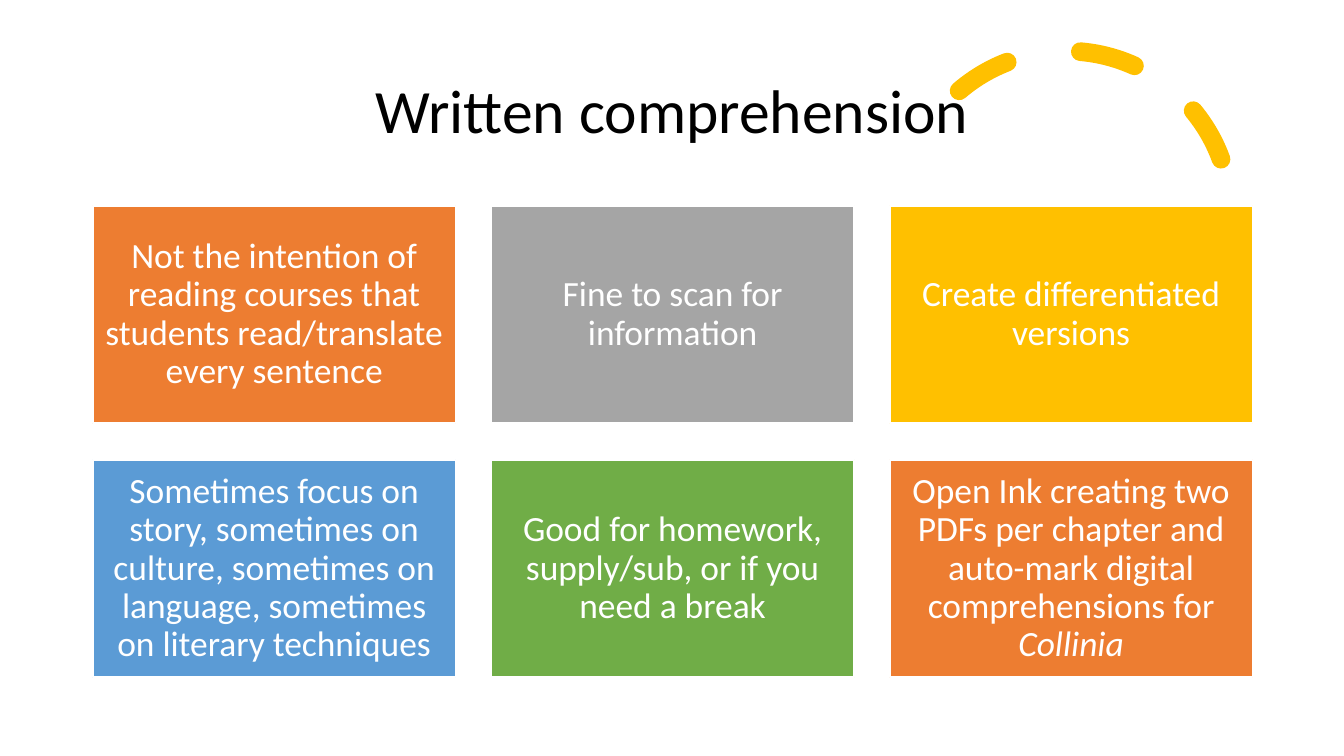
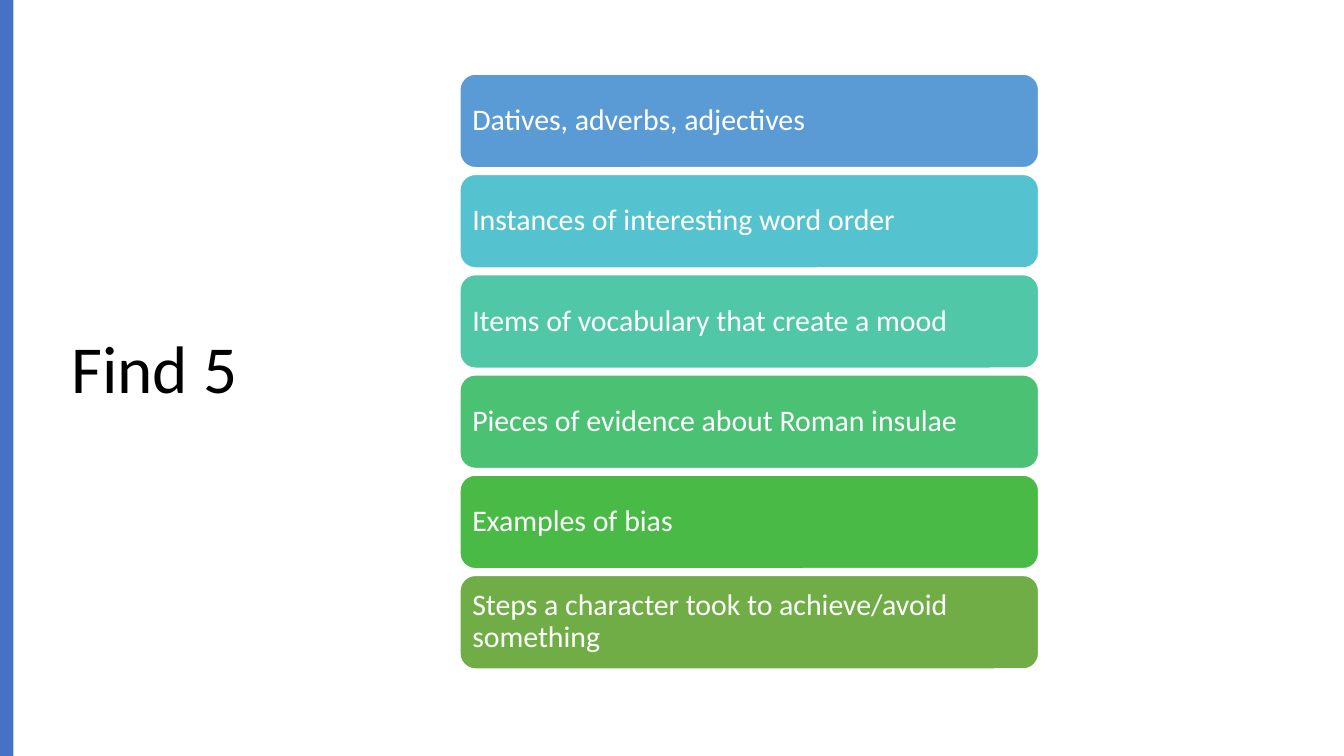
"""Build two teaching slides on written comprehension and close reading."""

from dataclasses import dataclass
from typing import Any

from lxml.etree import SubElement
from pptx import Presentation
from pptx.dml.color import RGBColor
from pptx.enum.dml import MSO_LINE_DASH_STYLE
from pptx.enum.shapes import MSO_SHAPE
from pptx.enum.text import MSO_ANCHOR, MSO_AUTO_SIZE, PP_ALIGN
from pptx.presentation import Presentation as Deck
from pptx.shapes.autoshape import Shape
from pptx.slide import Slide
from pptx.util import Inches, Pt


@dataclass(frozen=True)
class Theme:
    font: str = "Calibri"
    ink: str = "000000"
    paper: str = "FFFFFF"
    navy: str = "4472C4"
    orange: str = "ED7D31"
    grey: str = "A5A5A5"
    gold: str = "FFC000"
    blue: str = "5B9BD5"
    green: str = "70AD47"
    cyan: str = "55C3CF"
    teal: str = "50C8A7"
    mint: str = "4BC174"
    leaf: str = "4ABA46"
    wide_title: float = 33
    side_title: float = 36
    card_text: float = 19
    task_text: float = 16
    outline: float = 1
    arc_line: float = 10


@dataclass(frozen=True)
class Box:
    left: float
    top: float
    width: float
    height: float

    def lengths(self) -> tuple[Inches, ...]:
        return tuple(Inches(v) for v in (self.left, self.top, self.width, self.height))


@dataclass(frozen=True)
class Panel:
    text: str
    fill: str
    emphasis: str = ""


@dataclass(frozen=True)
class PanelStyle:
    preset: MSO_SHAPE
    size: float
    align: PP_ALIGN
    inset: float


THEME = Theme()
SLIDE = Box(0, 0, 10, 10 * 9 / 16)

ADVICE_TITLE = Box(0.69, 0.3, 8.62, 1.09)
ADVICE_FIRST = Box(0.69, 1.53, 2.7, 1.62)
ADVICE_LAST_LEFT, ADVICE_LAST_TOP, ADVICE_COLUMNS = 6.62, 3.42, 3
ADVICE_STYLE = PanelStyle(MSO_SHAPE.RECTANGLE, THEME.card_text, PP_ALIGN.CENTER, 0.08)
ADVICE = (
    Panel("Not the intention of reading courses that students read/translate every sentence", THEME.orange),
    Panel("Fine to scan for information", THEME.grey),
    Panel("Create differentiated versions", THEME.gold),
    Panel(
        "Sometimes focus on story, sometimes on culture, sometimes on language, "
        "sometimes on literary techniques",
        THEME.blue,
    ),
    Panel("Good for homework, supply/sub, or if you need a break", THEME.green),
    Panel(
        "Open Ink creating two PDFs per chapter and auto-mark digital comprehensions for ",
        THEME.orange,
        "Collinia",
    ),
)
ARC = Box(6.71, 0.38, 2.45, 2.45)

TASK_TITLE = Box(0.43, 0.51, 4.25, 4.51)
TASK_FIRST = Box(3.42, 0.55, 4.31, 0.7)
TASK_LAST_TOP = 4.28
TASK_STYLE = PanelStyle(MSO_SHAPE.ROUNDED_RECTANGLE, THEME.task_text, PP_ALIGN.LEFT, 0.06)
TASKS = (
    Panel("Datives, adverbs, adjectives", THEME.blue),
    Panel("Instances of interesting word order", THEME.cyan),
    Panel("Items of vocabulary that create a mood", THEME.teal),
    Panel("Pieces of evidence about Roman insulae", THEME.mint),
    Panel("Examples of bias", THEME.leaf),
    Panel("Steps a character took to achieve/avoid something", THEME.green),
)
SIDE_BAND = Box(0, 0, 0.1, SLIDE.height)


def apply(target: Any, values: dict[str, Any]) -> None:
    for name, value in values.items():
        setattr(target, name, value)


def write(shape: Shape, text: str, size: float, colour: str, align: PP_ALIGN,
          inset: float = 0.1, emphasis: str = "") -> None:
    frame = shape.text_frame
    margins = {f"margin_{side}": Inches(inset) for side in ("left", "top", "right", "bottom")}
    apply(frame, margins | {
        "word_wrap": True,
        "auto_size": MSO_AUTO_SIZE.NONE,
        "vertical_anchor": MSO_ANCHOR.MIDDLE,
    })
    paragraph = frame.paragraphs[0]
    apply(paragraph, {"alignment": align, "line_spacing": 0.9})
    for words, italic in ((text, False), (emphasis, True)):
        if words:
            run = paragraph.add_run()
            run.text = words
            apply(run.font, {"name": THEME.font, "size": Pt(size), "italic": italic})
            run.font.color.rgb = RGBColor.from_string(colour)


def add_titled_slide(deck: Deck, title: str, box: Box, size: float, align: PP_ALIGN) -> Slide:
    slide = deck.slides.add_slide(deck.slide_layouts[5])
    heading = slide.shapes.title
    apply(heading, dict(zip(("left", "top", "width", "height"), box.lengths())))
    write(heading, title, size, THEME.ink, align)
    return slide


def add_filled(slide: Slide, preset: MSO_SHAPE, box: Box, fill: str) -> Shape:
    shape = slide.shapes.add_shape(preset, *box.lengths())
    shape.shadow.inherit = False
    shape.fill.solid()
    shape.fill.fore_color.rgb = RGBColor.from_string(fill)
    shape.line.fill.background()
    return shape


def outline(shape: Shape, colour: str, width: float) -> None:
    shape.line.color.rgb = RGBColor.from_string(colour)
    shape.line.width = Pt(width)


def add_panel(slide: Slide, panel: Panel, box: Box, style: PanelStyle) -> None:
    shape = add_filled(slide, style.preset, box, panel.fill)
    outline(shape, THEME.paper, THEME.outline)
    write(shape, panel.text, style.size, THEME.paper, style.align, style.inset, panel.emphasis)


def add_panels(slide: Slide, panels: tuple[Panel, ...], first: Box, style: PanelStyle,
               columns: int, last_left: float, last_top: float) -> None:
    rows = len(panels) // columns
    column_step = (last_left - first.left) / max(columns - 1, 1)
    row_step = (last_top - first.top) / max(rows - 1, 1)
    for index, panel in enumerate(panels):
        row, column = divmod(index, columns)
        box = Box(first.left + column * column_step, first.top + row * row_step,
                  first.width, first.height)
        add_panel(slide, panel, box, style)


def add_dashed_arc(slide: Slide) -> None:
    arc = slide.shapes.add_shape(MSO_SHAPE.ARC, *ARC.lengths())
    arc.shadow.inherit = False
    arc.fill.background()
    arc.rotation = 345.8
    for index, angle in enumerate((146.13, 0)):
        arc.adjustments[index] = angle
    outline(arc, THEME.gold, THEME.arc_line)
    arc.line.dash_style = MSO_LINE_DASH_STYLE.DASH
    stroke = arc.line.fill._xPr
    stroke.set("cap", "rnd")
    SubElement(stroke, stroke.tag.replace("}ln", "}round"))
    heading = slide.shapes.title.element
    heading.getparent().append(heading)


def build_advice(deck: Deck) -> None:
    slide = add_titled_slide(deck, "Written comprehension", ADVICE_TITLE,
                             THEME.wide_title, PP_ALIGN.CENTER)
    add_dashed_arc(slide)
    add_panels(slide, ADVICE, ADVICE_FIRST, ADVICE_STYLE,
               ADVICE_COLUMNS, ADVICE_LAST_LEFT, ADVICE_LAST_TOP)


def build_tasks(deck: Deck) -> None:
    slide = add_titled_slide(deck, "Find 5", TASK_TITLE, THEME.side_title, PP_ALIGN.LEFT)
    add_filled(slide, MSO_SHAPE.RECTANGLE, SIDE_BAND, THEME.navy)
    add_panels(slide, TASKS, TASK_FIRST, TASK_STYLE, 1, TASK_FIRST.left, TASK_LAST_TOP)


def main() -> None:
    deck = Presentation()
    apply(deck, {"slide_width": Inches(SLIDE.width), "slide_height": Inches(SLIDE.height)})
    build_advice(deck)
    build_tasks(deck)
    deck.save("out.pptx")


if __name__ == "__main__":
    main()
